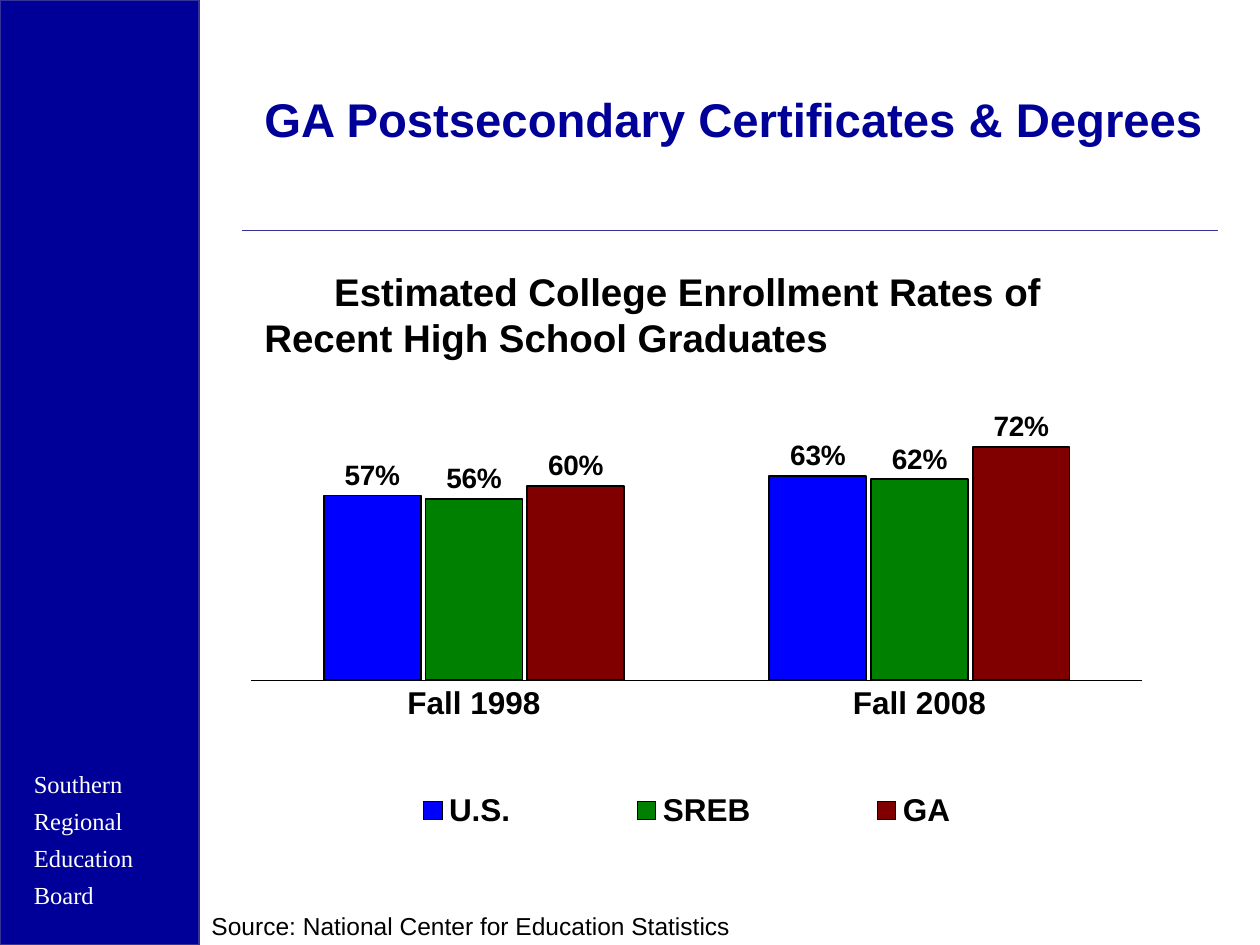
import pptx
import pptx.chart.data
import pptx.dml.color
import pptx.enum.chart
import pptx.enum.shapes
import pptx.enum.text
import pptx.oxml
import pptx.oxml.ns
import pptx.util

Inches = pptx.util.Inches
Pt = pptx.util.Pt
ALIGN = pptx.enum.text.PP_ALIGN

HUES = {
    "navy": "000099",
    "rule": "333399",
    "white": "FFFFFF",
    "black": "000000",
    "blue": "0000FF",
    "green": "008000",
    "red": "800000",
}


class Deck:
    """Holds the style and the current slide."""

    def __init__(self):
        self.file = pptx.Presentation()
        self.file.slide_width = Inches(10)
        self.file.slide_height = Inches(7.5)
        self.slide = self.file.slides.add_slide(self.file.slide_layouts[6])
        self.shapes = self.slide.shapes

    def hue(self, name):
        return pptx.dml.color.RGBColor.from_string(HUES[name])

    def fill(self, part, name):
        part.fill.solid()
        part.fill.fore_color.rgb = self.hue(name)

    def edge(self, line, name, width):
        line.color.rgb = self.hue(name)
        line.width = Pt(width)

    def style(self, font, size, hue="black", bold=True, face="Arial"):
        font.name = face
        font.size = Pt(size)
        font.bold = bold
        font.color.rgb = self.hue(hue)

    def panel(self, place, hue, edge):
        kind = pptx.enum.shapes.MSO_SHAPE.RECTANGLE
        box = self.shapes.add_shape(kind, *map(Inches, place))
        box.shadow.inherit = False
        self.fill(box, hue)
        self.edge(box.line, edge, 0.75)

    def rule(self, ends, hue):
        kind = pptx.enum.shapes.MSO_CONNECTOR.STRAIGHT
        line = self.shapes.add_connector(kind, *map(Inches, ends))
        self.edge(line.line, hue, 1)
        props = line._element.spPr
        props.append(props.makeelement(pptx.oxml.ns.qn("a:effectLst"), {}))

    def text(self, place, paras, size, space=None, **look):
        """Each paragraph is an alignment and a list of lines."""
        frame = self.shapes.add_textbox(*map(Inches, place)).text_frame
        frame.word_wrap = True
        for at, (align, lines) in enumerate(paras):
            para = frame.add_paragraph() if at else frame.paragraphs[0]
            para.alignment = align
            if space:
                para.line_spacing = space
            for row, words in enumerate(lines):
                if row:
                    para.add_line_break()
                run = para.add_run()
                run.text = words
                self.style(run.font, size, **look)

    def layout(self, part, place, inner=False):
        """Fix the place of a chart part, as shares of the chart."""
        old = part.find(pptx.oxml.ns.qn("c:layout"))
        if old is not None:
            part.remove(old)
        tags = '<c:layoutTarget val="inner"/>' if inner else ""
        tags += '<c:xMode val="edge"/><c:yMode val="edge"/>'
        tags += "".join(f'<c:{k} val="{v}"/>' for k, v in zip("xywh", place))
        node = pptx.oxml.parse_xml(
            f'<c:layout {pptx.oxml.ns.nsdecls("c")}>'
            f"<c:manualLayout>{tags}</c:manualLayout></c:layout>")
        if inner:
            part.insert(0, node)
        else:
            part.find(pptx.oxml.ns.qn("c:legendPos")).addnext(node)

    def chart(self, place, cats, rows):
        enum = pptx.enum.chart
        data = pptx.chart.data.CategoryChartData(number_format="0%")
        data.categories = cats
        for name, _, vals in rows:
            data.add_series(name, vals)
        chart = self.shapes.add_chart(
            enum.XL_CHART_TYPE.COLUMN_CLUSTERED,
            *map(Inches, place), data).chart
        chart.has_title = False
        self.style(chart.font, 14)

        # Bars and their labels
        plot = chart.plots[0]
        plot.gap_width = 150
        plot.overlap = -5
        plot.vary_by_categories = False
        for bars, (_, hue, _) in zip(plot.series, rows):
            self.fill(bars.format, hue)
            self.edge(bars.format.line, "black", 1)
            bars.invert_if_negative = False
            tags = bars.data_labels
            tags.show_value = True
            tags.number_format = "0%"
            tags.number_format_is_linked = False
            tags.position = enum.XL_LABEL_POSITION.OUTSIDE_END
            self.style(tags.font, 16)

        # Axes
        base, scale = chart.category_axis, chart.value_axis
        for axis in (base, scale):
            axis.major_tick_mark = enum.XL_TICK_MARK.NONE
            axis.minor_tick_mark = enum.XL_TICK_MARK.NONE
            axis.has_major_gridlines = False
        self.style(base.tick_labels.font, 18)
        self.edge(base.format.line, "black", 0.25)
        scale.minimum_scale = 0
        scale.maximum_scale = 1
        scale.major_unit = 0.1
        scale.tick_label_position = enum.XL_TICK_LABEL_POSITION.NONE
        scale.format.line.fill.background()

        # Legend and plot area
        chart.has_legend = True
        key = chart.legend
        key.position = enum.XL_LEGEND_POSITION.BOTTOM
        key.include_in_layout = False
        self.style(key.font, 18)
        self.layout(key._element, (0.09, 0.88, 0.79, 0.11))
        area = chart._chartSpace.chart.plotArea
        self.layout(area, (0.032, 0.086, 0.927, 0.606), inner=True)


def main():
    deck = Deck()

    # Side band and rule
    deck.panel((0, 0, 1.58, 7.5), "navy", "rule")
    board = ["Southern", "Regional", "Education", "Board"]
    deck.text((0.17, 6, 1.58, 1.5), [(ALIGN.LEFT, board)], 14, space=1.25,
              hue="white", bold=False, face="Times New Roman")
    deck.rule((1.92, 1.83, 9.67, 1.83), "rule")

    # Chart with its heading
    deck.text((2, 2.08, 7, 0.84), [
        (ALIGN.CENTER, ["Estimated College Enrollment Rates of "]),
        (ALIGN.LEFT, ["Recent High School Graduates"]),
    ], 22)
    deck.chart((1.75, 2.46, 7.63, 4.25), ["Fall 1998", "Fall 2008"], [
        ("U.S.", "blue", (0.57, 0.63)),
        ("SREB", "green", (0.56, 0.62)),
        ("GA", "red", (0.6, 0.72)),
    ])

    # Title and source
    title = "GA Postsecondary Certificates & Degrees"
    deck.text((2, 0.67, 7.75, 0.84), [(ALIGN.LEFT, [title])], 27, hue="navy")
    source = "Source: National Center for Education Statistics"
    deck.text((1.58, 7.18, 6.28, 0.33), [(ALIGN.LEFT, [source])], 14,
              bold=False)

    deck.file.save("out.pptx")


if __name__ == "__main__":
    main()
